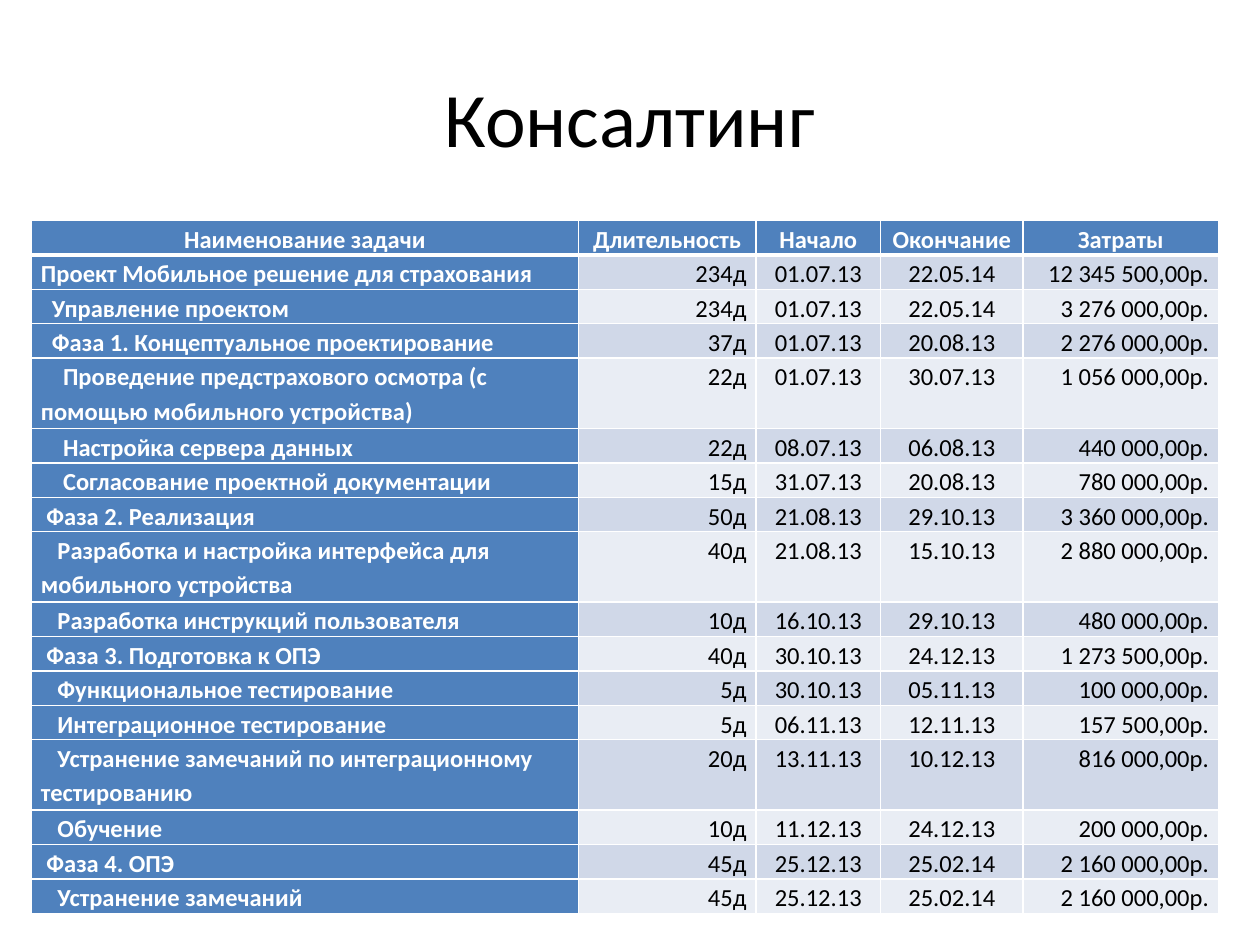
"""Build the consulting project plan slide: a title and a schedule table."""
from lxml import etree
from pptx import Presentation
from pptx.dml.color import RGBColor
from pptx.enum.text import MSO_ANCHOR, PP_ALIGN
from pptx.oxml.ns import qn
from pptx.util import Pt

LEFT, CENTER, RIGHT = PP_ALIGN.LEFT, PP_ALIGN.CENTER, PP_ALIGN.RIGHT
MIDDLE = MSO_ANCHOR.MIDDLE
FONT = "Calibri"
SPACE = 3.16
COLORS = {
    "head": "4F81BD",
    "odd": "D0D8E8",
    "even": "E9EDF4",
    "white": "FFFFFF",
    "black": "000000",
}
HEADERS = ["Наименование задачи", "Длительность", "Начало", "Окончание", "Затраты"]
TASKS = [
    (0, "Проект Мобильное решение для страхования", "234д", "01.07.13", "22.05.14", "12 345 500,00р."),
    (2, "Управление проектом", "234д", "01.07.13", "22.05.14", "3 276 000,00р."),
    (2, "Фаза 1. Концептуальное проектирование", "37д", "01.07.13", "20.08.13", "2 276 000,00р."),
    (4, "Проведение предстрахового осмотра (с помощью мобильного устройства)",
     "22д", "01.07.13", "30.07.13", "1 056 000,00р."),
    (4, "Настройка сервера данных", "22д", "08.07.13", "06.08.13", "440 000,00р."),
    (4, "Согласование проектной документации", "15д", "31.07.13", "20.08.13", "780 000,00р."),
    (1, "Фаза 2. Реализация", "50д", "21.08.13", "29.10.13", "3 360 000,00р."),
    (3, "Разработка и настройка интерфейса для мобильного устройства",
     "40д", "21.08.13", "15.10.13", "2 880 000,00р."),
    (3, "Разработка инструкций пользователя", "10д", "16.10.13", "29.10.13", "480 000,00р."),
    (1, "Фаза 3. Подготовка к ОПЭ", "40д", "30.10.13", "24.12.13", "1 273 500,00р."),
    (3, "Функциональное тестирование", "5д", "30.10.13", "05.11.13", "100 000,00р."),
    (3, "Интеграционное тестирование", "5д", "06.11.13", "12.11.13", "157 500,00р."),
    (3, "Устранение замечаний по интеграционному тестированию",
     "20д", "13.11.13", "10.12.13", "816 000,00р."),
    (3, "Обучение", "10д", "11.12.13", "24.12.13", "200 000,00р."),
    (1, "Фаза 4. ОПЭ", "45д", "25.12.13", "25.02.14", "2 160 000,00р."),
    (3, "Устранение замечаний", "45д", "25.12.13", "25.02.14", "2 160 000,00р."),
]
WIDTHS = [312.5, 101.5, 71.3, 81.4, 111.6]
ALIGNS = [LEFT, RIGHT, CENTER, CENTER, RIGHT]
ROW_H, TALL_H = 19.66, 40.3
WRAP_AT = 45


def add_run(p, text, size, color, bold=False):
    r = p.add_run()
    r.text = text
    r.font.name = FONT
    r.font.size = Pt(size)
    r.font.bold = bold
    r.font.color.rgb = RGBColor.from_string(COLORS[color])


def add_border(cell, side, width):
    tc_pr = cell._tc.get_or_add_tcPr()
    ln = etree.SubElement(tc_pr, qn(f"a:{side}"), w=str(Pt(width)))
    fill = etree.SubElement(ln, qn("a:solidFill"))
    etree.SubElement(fill, qn("a:srgbClr"), val=COLORS["white"])


prs = Presentation()
prs.slide_width, prs.slide_height = Pt(720), Pt(540)
s = prs.slides.add_slide(prs.slide_layouts[6])

title = s.shapes.add_textbox(Pt(36), Pt(21.6), Pt(648), Pt(90))
tf = title.text_frame
tf.word_wrap = True
tf.vertical_anchor = MIDDLE
p = tf.paragraphs[0]
p.alignment = CENTER
add_run(p, "Консалтинг", 44, "black")

rows = [(0, *HEADERS)] + TASKS
heights = [TALL_H if len(row[1]) > WRAP_AT else ROW_H for row in rows]
table = s.shapes.add_table(
    len(rows), len(WIDTHS), Pt(18), Pt(126), Pt(sum(WIDTHS)), Pt(sum(heights))
).table
for column, width in zip(table.columns, WIDTHS):
    column.width = Pt(width)

for i, (indent, *values) in enumerate(rows):
    table.rows[i].height = Pt(heights[i])
    for j, value in enumerate(values):
        cell = table.cell(i, j)
        is_head = i == 0 or j == 0
        cell.margin_left = cell.margin_right = Pt(5.4)
        cell.margin_top = cell.margin_bottom = 0
        add_border(cell, "lnL", 1)
        add_border(cell, "lnR", 1)
        add_border(cell, "lnT", 3 if i == 1 else 1)
        add_border(cell, "lnB", 3 if i == 0 else 1)
        cell.fill.solid()
        fill = "head" if is_head else "odd" if i % 2 else "even"
        cell.fill.fore_color.rgb = RGBColor.from_string(COLORS[fill])
        p = cell.text_frame.paragraphs[0]
        p.alignment = CENTER if i == 0 else ALIGNS[j]
        p.line_spacing = 1.15
        if j == 0 and indent:
            p_pr = p._p.get_or_add_pPr()
            p_pr.set("marL", "0")
            p_pr.set("indent", str(Pt(indent * SPACE)))
        add_run(p, value, 14, "white" if is_head else "black", is_head)

prs.save("out.pptx")
